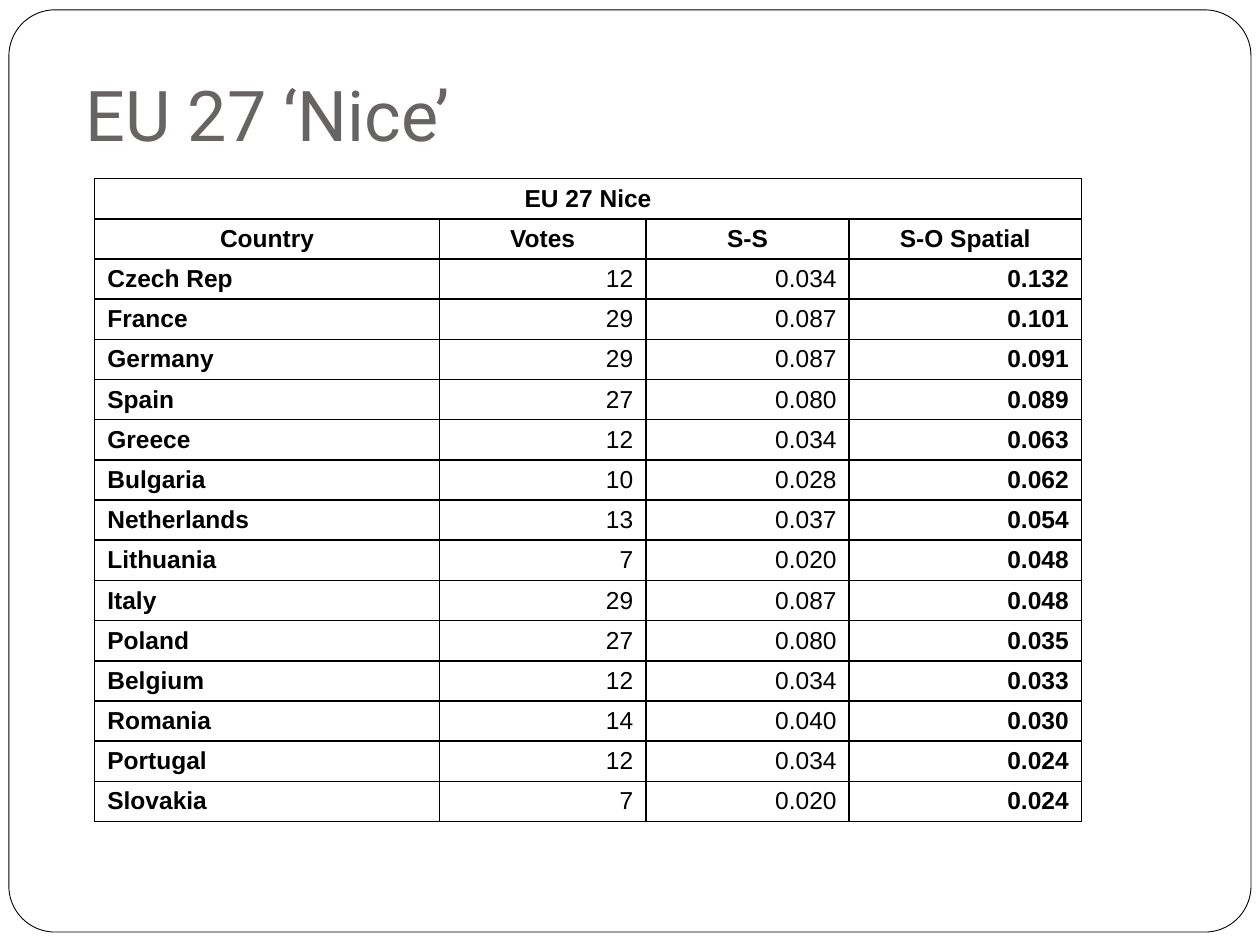
import pptx
import pptx.util
import pptx.dml.color
import pptx.enum.shapes
import pptx.enum.text
import pptx.oxml
import pptx.oxml.ns

Cm = pptx.util.Cm
Pt = pptx.util.Pt
RGBColor = pptx.dml.color.RGBColor
ALIGN = pptx.enum.text.PP_ALIGN
ANCHOR = pptx.enum.text.MSO_ANCHOR

# Content
TITLE = "EU 27 ‘Nice’"
TABLE_TITLE = "EU 27 Nice"
HEADERS = ["Country", "Votes", "S-S", "S-O Spatial"]
COUNTRIES = [
    ("Czech Rep", "12", "0.034", "0.132"),
    ("France", "29", "0.087", "0.101"),
    ("Germany", "29", "0.087", "0.091"),
    ("Spain", "27", "0.080", "0.089"),
    ("Greece", "12", "0.034", "0.063"),
    ("Bulgaria", "10", "0.028", "0.062"),
    ("Netherlands", "13", "0.037", "0.054"),
    ("Lithuania", "7", "0.020", "0.048"),
    ("Italy", "29", "0.087", "0.048"),
    ("Poland", "27", "0.080", "0.035"),
    ("Belgium", "12", "0.034", "0.033"),
    ("Romania", "14", "0.040", "0.030"),
    ("Portugal", "12", "0.034", "0.024"),
    ("Slovakia", "7", "0.020", "0.024"),
]

# Look
WHITE = RGBColor(0xFF, 0xFF, 0xFF)
BLACK = RGBColor(0x00, 0x00, 0x00)
TITLE_GREY = RGBColor(0x69, 0x64, 0x64)
COLUMN_WIDTHS = [6.95, 4.16, 4.1, 4.68]
COLUMN_ALIGNS = [ALIGN.LEFT, ALIGN.RIGHT, ALIGN.RIGHT, ALIGN.RIGHT]
COLUMN_BOLD = [True, False, False, True]
ROW_HEIGHT = 0.81
CELL_TOP_MARGIN = 0.07


def add_run(paragraph, text, font_name, size, color, bold=False):
    run = paragraph.add_run()
    run.text = text
    run.font.name = font_name
    run.font.size = Pt(size)
    run.font.color.rgb = color
    run.font.bold = bold


def set_borders(cell, color, width):
    properties = cell._tc.get_or_add_tcPr()
    for position, side in enumerate(("lnL", "lnR", "lnT", "lnB")):
        line = pptx.oxml.parse_xml(
            f'<a:{side} {pptx.oxml.ns.nsdecls("a")} w="{Pt(width)}">'
            f'<a:solidFill><a:srgbClr val="{color}"/></a:solidFill></a:{side}>'
        )
        properties.insert(position, line)


def fill_cell(cell, text, align, bold):
    cell.fill.background()
    set_borders(cell, BLACK, 1)
    cell.vertical_anchor = ANCHOR.BOTTOM
    cell.margin_top = Cm(CELL_TOP_MARGIN)
    if text:
        paragraph = cell.text_frame.paragraphs[0]
        paragraph.alignment = align
        add_run(paragraph, text, "Arial", 14, BLACK, bold)


def add_frame(slide):
    frame = slide.shapes.add_shape(
        pptx.enum.shapes.MSO_SHAPE.ROUNDED_RECTANGLE,
        Cm(0.18), Cm(0.2), Cm(25.04), Cm(18.59))
    frame.adjustments[0] = 0.05
    frame.shadow.inherit = False
    frame.fill.solid()
    frame.fill.fore_color.rgb = WHITE
    frame.line.color.rgb = BLACK
    frame.line.width = Pt(0.5)


def add_title(slide):
    text_box = slide.shapes.add_textbox(Cm(1.47), Cm(1.27), Cm(22.86), Cm(2.11))
    text_frame = text_box.text_frame
    text_frame.word_wrap = True
    text_frame.vertical_anchor = ANCHOR.BOTTOM
    text_frame.margin_bottom = Cm(0.25)
    add_run(text_frame.paragraphs[0], TITLE, "Roboto", 40, TITLE_GREY)


def add_votes_table(slide):
    # The first row is one title cell across all columns
    rows = [[TABLE_TITLE, "", "", ""], HEADERS, *COUNTRIES]
    table = slide.shapes.add_table(
        len(rows), len(HEADERS), Cm(1.91), Cm(3.6),
        Cm(sum(COLUMN_WIDTHS)), Cm(ROW_HEIGHT * len(rows))).table
    table.first_row = False
    table.horz_banding = False
    for column, width in zip(table.columns, COLUMN_WIDTHS):
        column.width = Cm(width)
    for row_index, values in enumerate(rows):
        table.rows[row_index].height = Cm(ROW_HEIGHT)
        is_heading = row_index < 2
        for column_index, text in enumerate(values):
            align = ALIGN.CENTER if is_heading else COLUMN_ALIGNS[column_index]
            bold = is_heading or COLUMN_BOLD[column_index]
            fill_cell(table.cell(row_index, column_index), text, align, bold)
    table.cell(0, 0).merge(table.cell(0, len(HEADERS) - 1))
    # Empty merged cells must not stretch the title row
    for column_index in range(1, len(HEADERS)):
        paragraph = table.cell(0, column_index).text_frame.paragraphs[0]
        paragraph.font.size = Pt(14)


def main():
    presentation = pptx.Presentation()
    presentation.slide_width = Cm(25.4)
    presentation.slide_height = Cm(19.05)
    slide = presentation.slides.add_slide(presentation.slide_layouts[6])
    add_frame(slide)
    add_title(slide)
    add_votes_table(slide)
    presentation.save("out.pptx")


if __name__ == "__main__":
    main()
